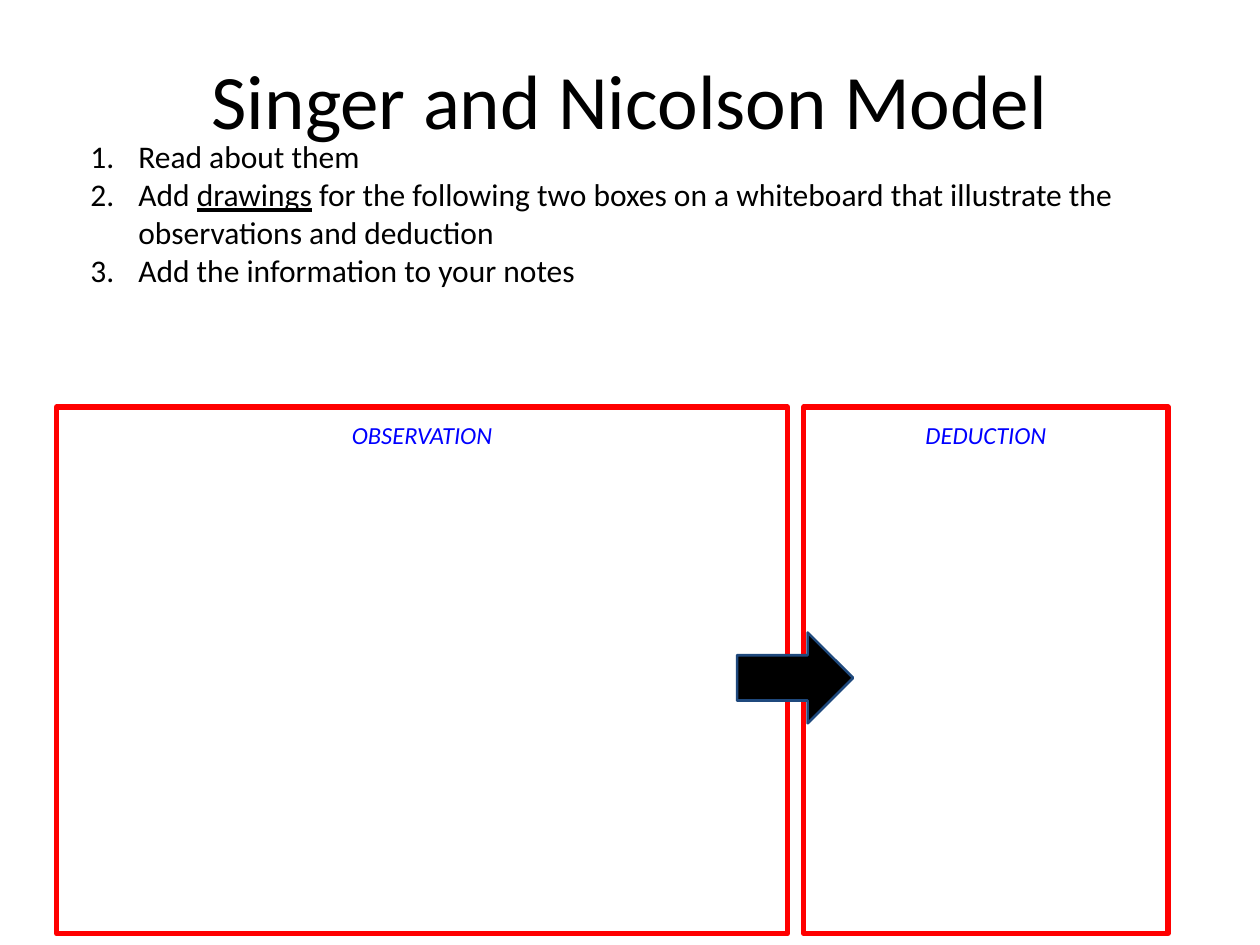
from lxml import etree
from pptx import Presentation
from pptx.dml.color import RGBColor
from pptx.enum.shapes import MSO_SHAPE
from pptx.enum.text import MSO_ANCHOR, PP_ALIGN
from pptx.oxml.ns import qn
from pptx.util import Inches, Pt

RECT, ARROW = MSO_SHAPE.RECTANGLE, MSO_SHAPE.RIGHT_ARROW
TOP, BOTTOM = MSO_ANCHOR.TOP, MSO_ANCHOR.BOTTOM
LEFT, CENTER = PP_ALIGN.LEFT, PP_ALIGN.CENTER
BLACK = RGBColor(0, 0, 0)
RED = RGBColor(255, 0, 0)
BLUE = RGBColor(0, 0, 255)
NAVY = RGBColor(0x1F, 0x49, 0x7D)
FONT = "Calibri"

STEPS = [
    ["Read about them"],
    ["Add ", "drawings",
     " for the following two boxes on a whiteboard that illustrate the observations and deduction"],
    ["Add the information to your notes"],
]


def write(shape, lines, size=18, color=BLACK, align=LEFT, anchor=TOP,
          italic=False, under=None, number=False):
    frame = shape.text_frame
    frame.word_wrap = True
    frame.vertical_anchor = anchor
    frame.margin_left = frame.margin_right = Inches(0.1)
    frame.margin_top = frame.margin_bottom = Inches(0.1)
    for index, line in enumerate(lines):
        para = frame.add_paragraph() if index else frame.paragraphs[0]
        para.alignment = align
        if number:
            props = para._p.get_or_add_pPr()
            props.set("marL", str(Inches(0.5)))
            props.set("indent", str(-Inches(0.38)))
            bullet = etree.SubElement(props, qn("a:buAutoNum"))
            bullet.set("type", "arabicPeriod")
        for part in line:
            run = para.add_run()
            run.text = part
            font = run.font
            font.name, font.size, font.italic = FONT, Pt(size), italic
            font.color.rgb = color
            if part == under:
                font.underline = True


def add_text(slide, box, lines, **style):
    write(slide.shapes.add_textbox(*map(Inches, box)), lines, **style)


def add_panel(slide, box, label):
    panel = slide.shapes.add_shape(RECT, *map(Inches, box))
    panel.shadow.inherit = False
    panel.fill.background()
    panel.line.color.rgb = RED
    panel.line.width = Pt(3)
    write(panel, [[label]], size=14, color=BLUE, align=CENTER, italic=True)


def add_arrow(slide, box):
    arrow = slide.shapes.add_shape(ARROW, *map(Inches, box))
    arrow.shadow.inherit = False
    arrow.fill.solid()
    arrow.fill.fore_color.rgb = BLACK
    arrow.line.color.rgb = NAVY
    arrow.line.width = Pt(1.5)


def add_model(slide, box):
    left, top, width, height = box
    gap, side = 0.13, 2.89
    main = width - side - gap
    add_panel(slide, (left + main + gap, top, side, height), "DEDUCTION")
    add_panel(slide, (left, top, main, height), "OBSERVATION")
    add_arrow(slide, (left + main - 0.4, top + 1.79, 0.92, 0.72))


def main():
    deck = Presentation()
    deck.slide_width, deck.slide_height = Inches(10), Inches(7.5)
    slide = deck.slides.add_slide(deck.slide_layouts[6])
    add_text(slide, (0.5, 0, 9, 1.25), [["Singer and Nicolson Model"]],
             size=44, align=CENTER, anchor=BOTTOM)
    add_text(slide, (0.5, 0.99, 9, 6.2), STEPS, under="drawings", number=True)
    add_model(slide, (0.45, 3.23, 8.82, 4.18))
    deck.save("out.pptx")


if __name__ == "__main__":
    main()
